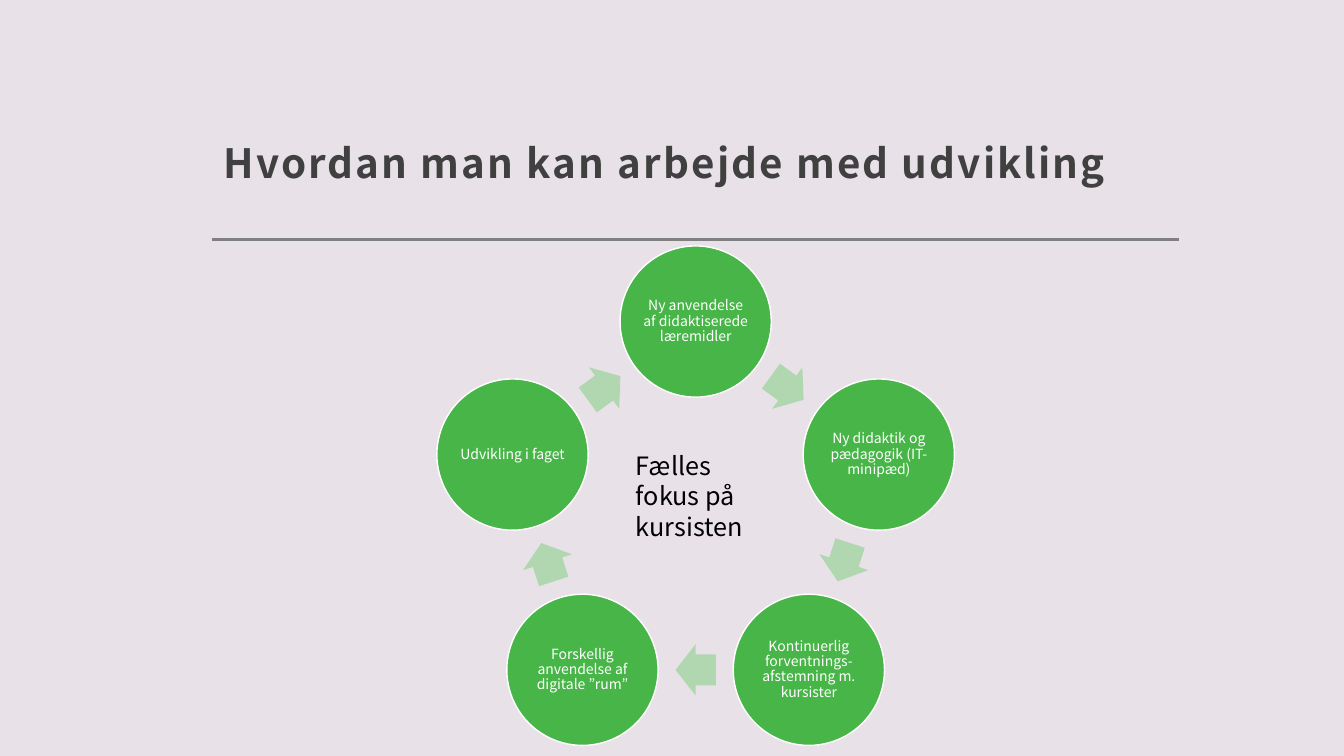
import math

from lxml import etree
from pptx import Presentation
from pptx.dml.color import RGBColor
from pptx.enum.shapes import MSO_CONNECTOR, MSO_SHAPE
from pptx.enum.text import MSO_ANCHOR, MSO_AUTO_SIZE, PP_ALIGN
from pptx.oxml.ns import qn
from pptx.util import Inches, Pt

STRAIGHT = MSO_CONNECTOR.STRAIGHT
ELLIPSE, RIGHT_ARROW = MSO_SHAPE.OVAL, MSO_SHAPE.RIGHT_ARROW
MIDDLE, BOTTOM = MSO_ANCHOR.MIDDLE, MSO_ANCHOR.BOTTOM
NO_AUTOFIT, GROW = MSO_AUTO_SIZE.NONE, MSO_AUTO_SIZE.SHAPE_TO_FIT_TEXT
LEFT, CENTER = PP_ALIGN.LEFT, PP_ALIGN.CENTER

FONT = "Noto Sans CJK JP"
STEPS = [
    "Ny anvendelse af didaktiserede læremidler",
    "Ny didaktik og pædagogik (IT-minipæd)",
    "Kontinuerlig forventnings-afstemning m. kursister",
    "Forskellig anvendelse af digitale ”rum”",
    "Udvikling i faget",
]
CENTER_X, CENTER_Y, RADIUS = 6.9, 5.1, 1.91
CIRCLE_SIZE = 1.5
ARROW_WIDTH, ARROW_HEIGHT = 0.4, 0.51


def color(value):
    return RGBColor.from_string(value)


def box(left, top, width, height):
    return [Inches(length) for length in (left, top, width, height)]


def box_around(x, y, width, height):
    return box(x - width / 2, y - height / 2, width, height)


def set_insets(frame, left, top, right, bottom):
    frame.margin_left, frame.margin_top = Inches(left), Inches(top)
    frame.margin_right, frame.margin_bottom = Inches(right), Inches(bottom)


def add_text(frame, text, size, font_color, alignment=LEFT, spacing=1.0):
    frame.word_wrap = True
    paragraph = frame.paragraphs[0]
    paragraph.alignment = alignment
    paragraph.line_spacing = spacing
    run = paragraph.add_run()
    run.text = text
    run.font.name = FONT
    run.font.size = Pt(size)
    run.font.color.rgb = color(font_color)
    return run


def add_title(slide, text):
    title = slide.shapes.title
    title.left, title.top, title.width, title.height = box(2.1, 0.48, 9.59, 1.47)
    frame = title.text_frame
    frame.auto_size = NO_AUTOFIT
    frame.vertical_anchor = BOTTOM
    set_insets(frame, 0.12, 0.12, 0.12, 0.1)
    run = add_text(frame, text, 28.8, "404040", spacing=1.3)
    run.font.bold = True
    run.font._element.set("spc", "150")  # letter spacing, 1.5 pt


def add_rule(slide, left, right, y):
    rule = slide.shapes.add_connector(
        STRAIGHT, Inches(left), Inches(y), Inches(right), Inches(y))
    rule.line.color.rgb = color("808080")
    rule.line.width = Pt(2)
    etree.SubElement(rule._element.spPr, qn("a:effectLst"))


def add_circle(slide, x, y, text):
    circle = slide.shapes.add_shape(
        ELLIPSE, *box_around(x, y, CIRCLE_SIZE, CIRCLE_SIZE))
    circle.shadow.inherit = False
    circle.fill.solid()
    circle.fill.fore_color.rgb = color("47B547")
    circle.line.color.rgb = color("FFFFFF")
    circle.line.width = Pt(1)
    frame = circle.text_frame
    frame.vertical_anchor = MIDDLE
    set_insets(frame, 0.01, 0.01, 0.01, 0.01)
    add_text(frame, text, 10, "FFFFFF", CENTER, 0.9)


def add_arrow(slide, x, y, rotation):
    arrow = slide.shapes.add_shape(
        RIGHT_ARROW, *box_around(x, y, ARROW_WIDTH, ARROW_HEIGHT))
    arrow.shadow.inherit = False
    arrow.adjustments[0], arrow.adjustments[1] = 0.6, 0.5
    arrow.rotation = rotation
    arrow.fill.solid()
    arrow.fill.fore_color.rgb = color("B1D7B1")
    arrow.line.fill.background()


def add_cycle(slide, steps):
    step_angle = 360 / len(steps)
    # Arrows sit midway between neighbouring circles
    arrow_radius = RADIUS * math.cos(math.radians(step_angle / 2))

    def point(angle, radius):
        radians = math.radians(angle)
        return (CENTER_X + radius * math.sin(radians),
                CENTER_Y - radius * math.cos(radians))

    for index, text in enumerate(steps):
        angle = index * step_angle
        arrow_angle = angle + step_angle / 2
        add_circle(slide, *point(angle, RADIUS), text)
        add_arrow(slide, *point(arrow_angle, arrow_radius), arrow_angle)


def add_focus(slide, text):
    frame = slide.shapes.add_textbox(*box(6.21, 4.42, 1.36, 1.01)).text_frame
    frame.auto_size = GROW
    add_text(frame, text, 18, "000000")


def main():
    presentation = Presentation()
    presentation.slide_width = Inches(13.33)
    presentation.slide_height = Inches(7.5)
    slide = presentation.slides.add_slide(presentation.slide_layouts[5])
    slide.background.fill.solid()
    slide.background.fill.fore_color.rgb = color("E8E2E8")

    # Heading
    add_rule(slide, 2.1, 11.69, 2.38)
    add_title(slide, "Hvordan man kan arbejde med udvikling")

    # Cycle with the shared focus in the middle
    add_cycle(slide, STEPS)
    add_focus(slide, "Fælles fokus på kursisten")

    presentation.save("out.pptx")


if __name__ == "__main__":
    main()
